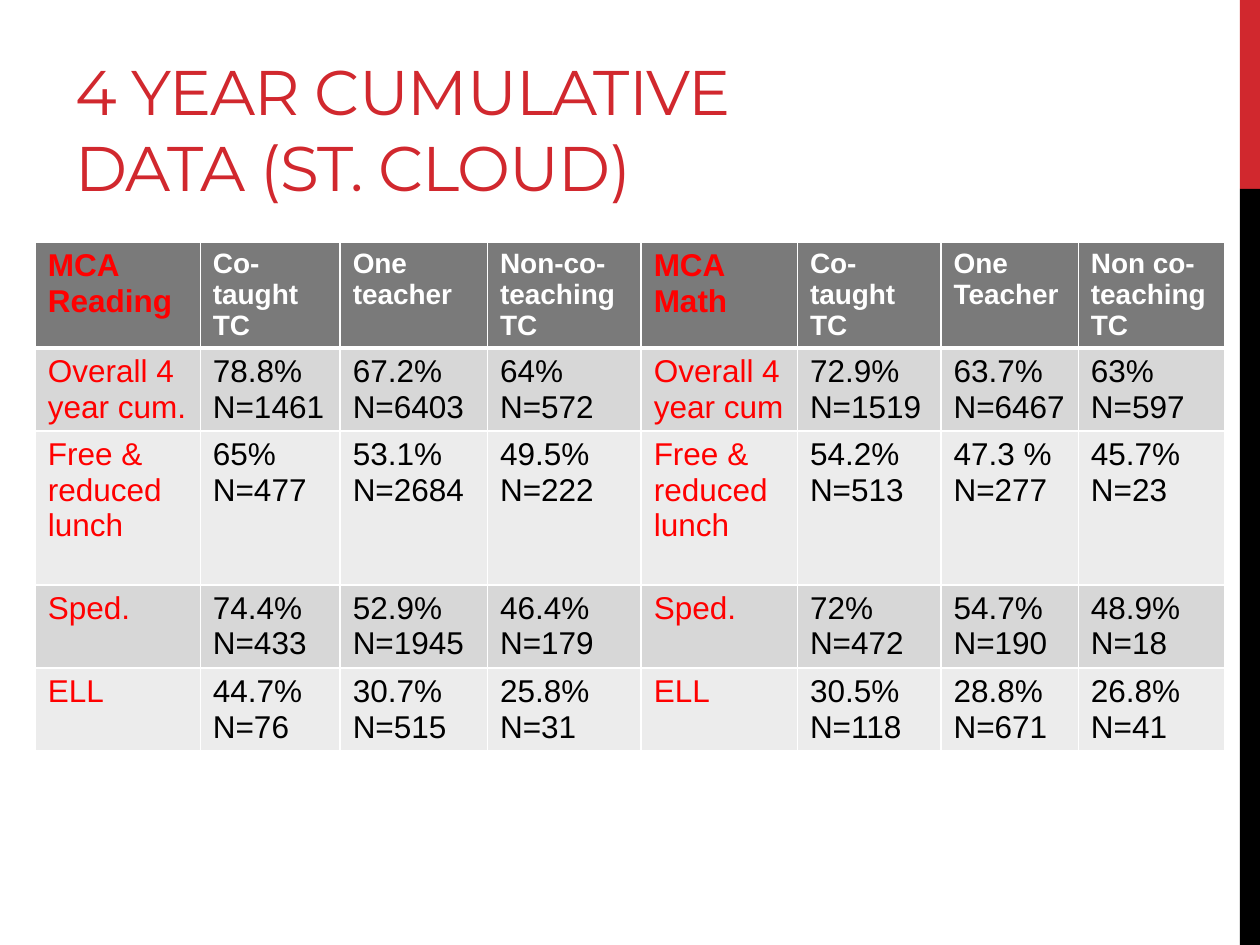
from dataclasses import dataclass
from typing import Any

from lxml.etree import SubElement
from pptx import Presentation
from pptx.dml.color import RGBColor
from pptx.enum.shapes import MSO_SHAPE
from pptx.enum.text import MSO_ANCHOR, MSO_AUTO_SIZE, PP_ALIGN
from pptx.oxml.ns import qn
from pptx.util import Inches, Pt

COLUMN_WIDTHS = [1.31, 1.11, 1.17, 1.22, 1.24, 1.14, 1.09, 1.16]
ROW_HEIGHTS = [0.83, 0.66, 1.22, 0.66, 0.66]
LABEL_COLUMNS = (0, 4)

HEADINGS = ["MCA Reading", "Co-taught TC", "One teacher", "Non-co-teaching TC",
            "MCA Math", "Co-taught TC", "One Teacher", "Non co-teaching TC"]
RESULTS = [
    ["Overall 4 year cum.", ("78.8%", 1461), ("67.2%", 6403), ("64%", 572),
     "Overall 4 year cum", ("72.9%", 1519), ("63.7%", 6467), ("63%", 597)],
    ["Free & reduced lunch", ("65%", 477), ("53.1%", 2684), ("49.5%", 222),
     "Free & reduced lunch", ("54.2%", 513), ("47.3 %", 277), ("45.7%", 23)],
    ["Sped.", ("74.4%", 433), ("52.9%", 1945), ("46.4%", 179),
     "Sped.", ("72%", 472), ("54.7%", 190), ("48.9%", 18)],
    ["ELL", ("44.7%", 76), ("30.7%", 515), ("25.8%", 31),
     "ELL", ("30.5%", 118), ("28.8%", 671), ("26.8%", 41)],
]


def rgb(hex_color):
    return RGBColor.from_string(hex_color)


@dataclass
class SlideBuilder:
    slide: Any
    accent: str = "D1282E"
    label: str = "FF0000"
    header_fill: str = "7A7A7A"
    rule: str = "FFFFFF"
    bands: tuple = ("D7D7D7", "ECECEC")
    title_font: str = "Montserrat"
    body_font: str = "Arial"

    def format_runs(self, frame, font, size, color, bold=False):
        for paragraph in frame.paragraphs:
            for run in paragraph.runs:
                run.font.name = font
                run.font.size = Pt(size)
                run.font.bold = bold
                run.font.color.rgb = rgb(color)

    def bar(self, left, top, width, height, color):
        bar = self.slide.shapes.add_shape(
            MSO_SHAPE.RECTANGLE, Inches(left), Inches(top), Inches(width), Inches(height))
        bar.shadow.inherit = False
        bar.fill.solid()
        bar.fill.fore_color.rgb = rgb(color)
        bar.line.fill.background()

    def title(self, text, left, top, width, height):
        heading = self.slide.shapes.title
        heading.left, heading.top = Inches(left), Inches(top)
        heading.width, heading.height = Inches(width), Inches(height)
        frame = heading.text_frame
        frame.text = text
        frame.word_wrap = True
        frame.auto_size = MSO_AUTO_SIZE.NONE
        frame.vertical_anchor = MSO_ANCHOR.BOTTOM
        paragraph = frame.paragraphs[0]
        paragraph.alignment = PP_ALIGN.LEFT
        self.format_runs(frame, self.title_font, 36, self.accent)
        paragraph.runs[0].font._element.set("spc", "-60")

    def borders(self, cell, bottom):
        """Rule all four sides 1 pt wide, except the bottom, which is given in points."""
        properties = cell._tc.get_or_add_tcPr()
        widths = {"a:lnL": 1, "a:lnR": 1, "a:lnT": 1, "a:lnB": bottom}
        for position, (side, width) in enumerate(widths.items()):
            line = SubElement(properties, qn(side), w=str(Pt(width)))
            fill = SubElement(line, qn("a:solidFill"))
            SubElement(fill, qn("a:srgbClr"), val=self.rule)
            properties.insert(position, line)

    def cell(self, cell, content, row, column):
        """Fill one cell; a (rate, count) pair takes two paragraphs."""
        is_header = row == 0
        is_label = column in LABEL_COLUMNS
        cell.text = content if isinstance(content, str) else f"{content[0]}\nN={content[1]}"
        cell.fill.solid()
        cell.fill.fore_color.rgb = rgb(
            self.header_fill if is_header else self.bands[(row - 1) % 2])
        color = self.label if is_label else "FFFFFF" if is_header else "000000"
        size = 16 if is_header and not is_label else 18
        self.format_runs(cell.text_frame, self.body_font, size, color, is_header)
        if is_header:
            self.borders(cell, bottom=3)

    def table(self, rows, left, top):
        table = self.slide.shapes.add_table(
            len(rows), len(COLUMN_WIDTHS), Inches(left), Inches(top),
            Inches(sum(COLUMN_WIDTHS)), Inches(sum(ROW_HEIGHTS))).table
        for column, width in zip(table.columns, COLUMN_WIDTHS):
            column.width = Inches(width)
        for row, height in zip(table.rows, ROW_HEIGHTS):
            row.height = Inches(height)
        for r, contents in enumerate(rows):
            for c, content in enumerate(contents):
                self.cell(table.cell(r, c), content, r, c)


def main():
    presentation = Presentation()
    presentation.slide_width = Inches(10)
    presentation.slide_height = Inches(7.5)
    title_only = presentation.slide_layouts[5]
    builder = SlideBuilder(presentation.slides.add_slide(title_only))
    builder.bar(9.84, 0, 0.16, 1.5, builder.accent)
    builder.bar(9.84, 1.5, 0.16, 6, "000000")
    builder.title("4 YEAR CUMULATIVE DATA (ST. CLOUD)", 0.5, 0.17, 6.33, 1.5)
    builder.table([HEADINGS, *RESULTS], 0.28, 1.92)
    presentation.save("out.pptx")


if __name__ == "__main__":
    main()
